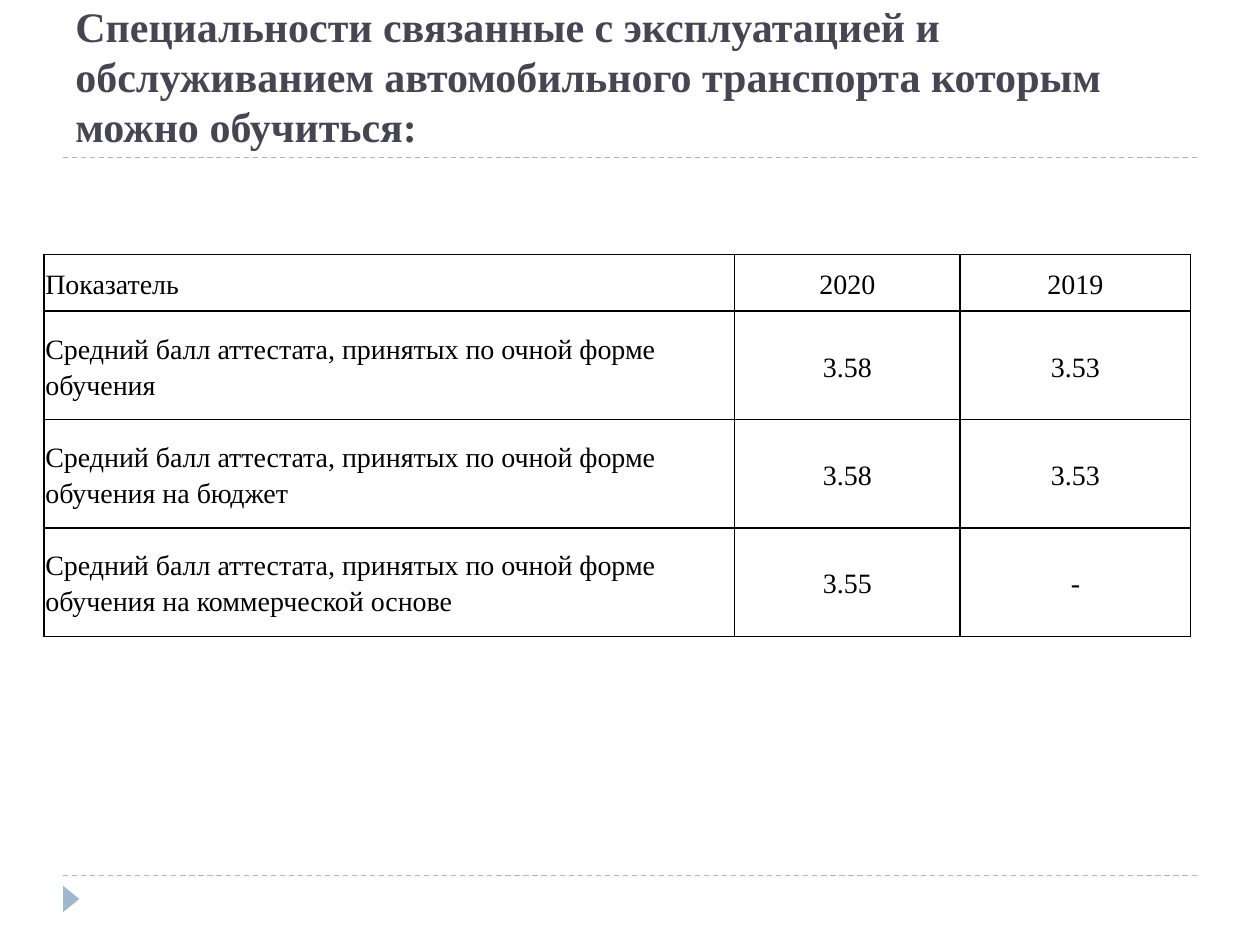
from lxml import etree
from pptx import Presentation
from pptx.dml.color import RGBColor
from pptx.enum.dml import MSO_LINE
from pptx.enum.shapes import MSO_CONNECTOR, MSO_SHAPE
from pptx.enum.text import MSO_ANCHOR, PP_ALIGN
from pptx.oxml.ns import qn
from pptx.util import Inches, Pt

STRAIGHT = MSO_CONNECTOR.STRAIGHT
TRIANGLE = MSO_SHAPE.ISOSCELES_TRIANGLE
DASH = MSO_LINE.DASH
MIDDLE, BOTTOM = MSO_ANCHOR.MIDDLE, MSO_ANCHOR.BOTTOM
LEFT, CENTER = PP_ALIGN.LEFT, PP_ALIGN.CENTER

FONT = "Times New Roman"
ACCENT, TITLE_COLOR, BLACK = "9FB8CD", "464653", "000000"

TITLE = ("Специальности связанные с эксплуатацией и обслуживанием "
         "автомобильного транспорта которым можно обучиться:")
SCORE = "Средний балл аттестата, принятых по очной форме обучения"
SCORES = [
    ("Показатель", "2020", "2019"),
    (SCORE, "3.58", "3.53"),
    (f"{SCORE} на бюджет", "3.58", "3.53"),
    (f"{SCORE} на коммерческой основе", "3.55", "-"),
]
COLUMN_WIDTHS = (5.48, 1.79, 1.83)
ROW_HEIGHTS = (0.45, 0.86, 0.86, 0.86)


def rgb(value):
    return RGBColor.from_string(value)


def set_font(paragraph, size, color, bold=False):
    font = paragraph.font
    font.name, font.size, font.bold = FONT, Pt(size), bold
    font.color.rgb = rgb(color)


def add_rule(slide, y):
    """Dashed line across the slide."""
    rule = slide.shapes.add_connector(
        STRAIGHT, Inches(0.5), Inches(y), Inches(9.5), Inches(y))
    rule.line.color.rgb = rgb(ACCENT)
    rule.line.width = Pt(0.75)
    rule.line.dash_style = DASH
    etree.SubElement(rule._element.spPr, qn("a:effectLst"))


def add_marker(slide):
    marker = slide.shapes.add_shape(
        TRIANGLE, Inches(0.46), Inches(7.07), Inches(0.21), Inches(0.13))
    marker.rotation = 90
    marker.shadow.inherit = False
    marker.fill.solid()
    marker.fill.fore_color.rgb = rgb(ACCENT)
    marker.line.fill.background()


def add_title(slide):
    title = slide.shapes.add_textbox(
        Inches(0.5), Inches(0.25), Inches(9), Inches(1))
    frame = title.text_frame
    frame.word_wrap = True
    frame.vertical_anchor = BOTTOM
    frame.text = TITLE
    set_font(frame.paragraphs[0], 24, TITLE_COLOR, bold=True)


def add_borders(cell):
    properties = cell._tc.get_or_add_tcPr()
    for position, side in enumerate(("lnL", "lnR", "lnT", "lnB")):
        border = etree.Element(qn(f"a:{side}"), w=str(Pt(1)))
        fill = etree.SubElement(border, qn("a:solidFill"))
        etree.SubElement(fill, qn("a:srgbClr"), val=BLACK)
        properties.insert(position, border)


def fill_cell(cell, text, alignment):
    cell.text = text
    cell.vertical_anchor = MIDDLE
    cell.margin_left = cell.margin_right = Inches(0.01)
    cell.margin_top = cell.margin_bottom = Inches(0.01)
    cell.fill.background()
    add_borders(cell)
    paragraph = cell.text_frame.paragraphs[0]
    paragraph.alignment = alignment
    paragraph.line_spacing = 1.15
    paragraph.space_after = Pt(10)
    set_font(paragraph, 16, BLACK)


def add_score_table(slide):
    table = slide.shapes.add_table(
        len(SCORES), len(COLUMN_WIDTHS), Inches(0.35), Inches(2.02),
        Inches(sum(COLUMN_WIDTHS)), Inches(sum(ROW_HEIGHTS))).table
    table.first_row = table.horz_banding = False
    for column, width in zip(table.columns, COLUMN_WIDTHS):
        column.width = Inches(width)
    for row, height, texts in zip(table.rows, ROW_HEIGHTS, SCORES):
        row.height = Inches(height)
        for index, text in enumerate(texts):
            fill_cell(row.cells[index], text, CENTER if index else LEFT)


def main():
    presentation = Presentation()
    presentation.slide_width = Inches(10)
    presentation.slide_height = Inches(7.5)
    slide = presentation.slides.add_slide(presentation.slide_layouts[6])
    for y in (6.95, 1.25):
        add_rule(slide, y)
    add_marker(slide)
    add_title(slide)
    add_score_table(slide)
    presentation.save("out.pptx")


if __name__ == "__main__":
    main()
